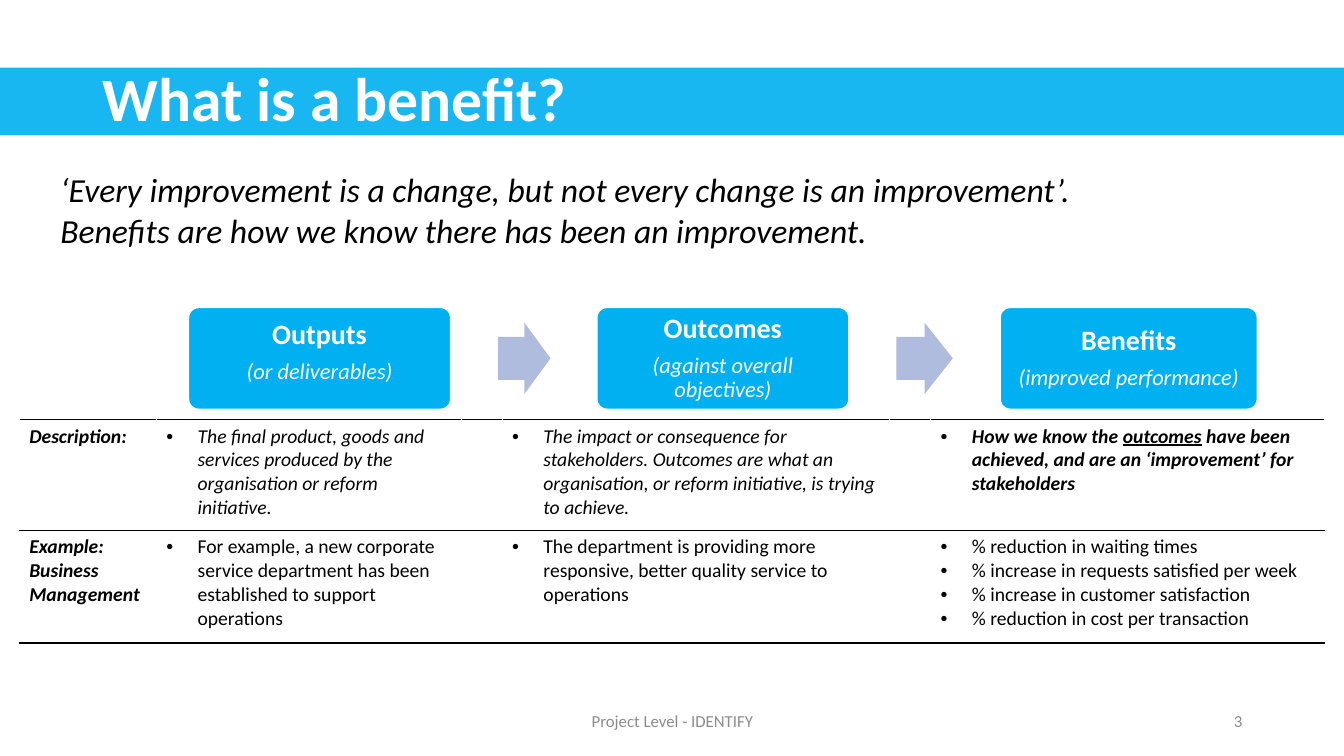
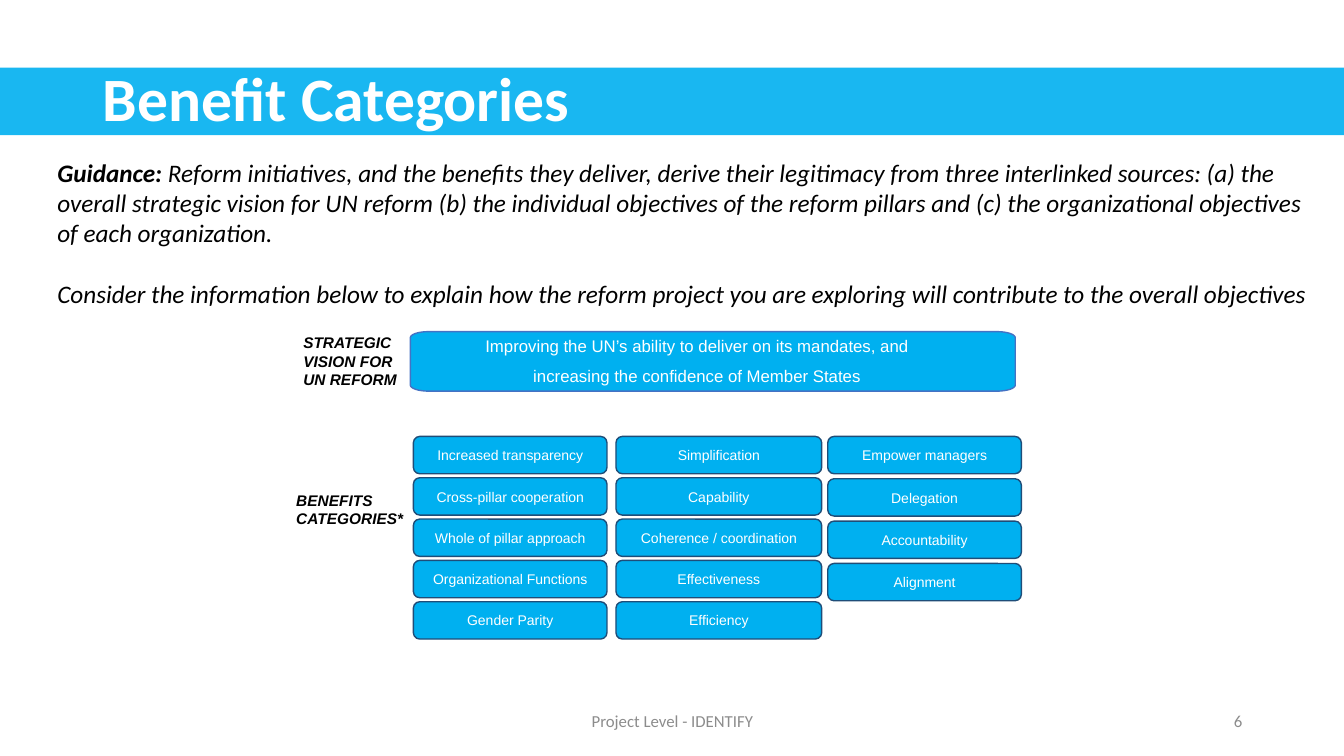
from math import cos, pi, sin

from lxml.etree import SubElement
from pptx import Presentation
from pptx.dml.color import RGBColor
from pptx.enum.shapes import MSO_SHAPE as Shape
from pptx.enum.text import MSO_ANCHOR as Anchor, PP_ALIGN as Align
from pptx.oxml import parse_xml
from pptx.oxml.ns import nsdecls, qn
from pptx.util import Inches, Pt

SKY = RGBColor(0x00, 0xB0, 0xF0)
NAVY = RGBColor(0x1F, 0x4D, 0x78)
BLUE = RGBColor(0x44, 0x72, 0xC4)
LAVENDER = RGBColor(0xB0, 0xBC, 0xDE)
GREY = RGBColor(0x8C, 0x8C, 0x8C)
BLACK = RGBColor(0, 0, 0)
WHITE = RGBColor(0xFF, 0xFF, 0xFF)

WIDTH, HEIGHT = 13.33, 7.5
FOOTER = "Project Level - IDENTIFY"

QUOTE = [
    [("‘Every improvement is a change, but not every change is an improvement’.", "i")],
    [("Benefits are how we know there has been an improvement.", "i")],
]
STAGES = [
    (1.87, 2.6, "Outputs", "(or deliverables)", 0.2),
    (5.92, 2.5, "Outcomes", "(against overall objectives)", 0.08),
    (9.92, 2.55, "Benefits", "(improved performance)", 0.08),
]
ARROWS = [(4.94, 0.52), (8.89, 0.56)]
TABLE_COLUMNS = [1.36, 3.03, 0.4, 3.84, 0.41, 3.91]
TABLE_ROWS = [
    (1.1, [
        [[("Description:", "bi")]],
        [[("The final product, goods and services produced by the organisation "
           "or reform initiative.", "i")]],
        [[("The impact or consequence for stakeholders. Outcomes are what an "
           "organisation, or reform initiative, is trying to achieve.", "i")]],
        [[("How we know the ", "bi"), ("outcomes", "biu"),
          (" have been achieved, and are an ‘improvement’ for stakeholders", "bi")]],
    ]),
    (1.12, [
        [[("Example: Business Management", "bi")]],
        [[("For example, a new corporate service department has been established "
           "to support operations", "")]],
        [[("The department is providing more responsive, better quality service "
           "to operations", "")]],
        [[("% reduction in waiting times", "")],
         [("% increase in requests satisfied per week", "")],
         [("% increase in customer satisfaction", "")],
         [("% reduction in cost per transaction", "")]],
    ]),
]
FILLED_COLUMNS = [0, 1, 3, 5]

GUIDANCE = [
    [("Guidance: ", "bi"),
     ("Reform initiatives, and the benefits they deliver, derive their legitimacy from "
      "three interlinked sources: (a) the overall strategic vision for UN reform (b) the "
      "individual objectives of the reform pillars and (c) the organizational objectives "
      "of each organization.", "i")],
    [("Consider the information below to explain how the reform project you are "
      "exploring will contribute to the overall objectives", "i")],
]
VISION = [
    [("Improving the UN’s ability to deliver on its mandates, and", "")],
    [("increasing the confidence of Member States", "")],
]
SIDE_LABELS = [
    ("STRATEGIC VISION FOR UN REFORM", (2.91, 3.24, 1.19, 0.68)),
    ("BENEFITS CATEGORIES*", (2.84, 4.81, 1.4, 0.49)),
]
CATEGORIES = [
    (4.1, 1.92, 0.41, ["Increased transparency", "Cross-pillar cooperation",
                       "Whole of pillar approach", "Organizational Functions",
                       "Gender Parity"]),
    (6.11, 2.04, 0.41, ["Simplification", "Capability", "Coherence / coordination",
                        "Effectiveness", "Efficiency"]),
    (8.21, 1.92, 0.42, ["Empower managers", "Delegation", "Accountability", "Alignment"]),
]
CATEGORY_TOP, CATEGORY_HEIGHT = 4.33, 0.37


def write(frame, paragraphs, size, color, font="Calibri", align=Align.LEFT,
          anchor=Anchor.TOP):
    frame.word_wrap = True
    frame.vertical_anchor = anchor
    for index, spans in enumerate(paragraphs):
        para = frame.add_paragraph() if index else frame.paragraphs[0]
        para.alignment = align
        for text, marks in spans:
            span = para.add_run()
            span.text = text
            span.font.name = font
            span.font.size = Pt(size)
            span.font.color.rgb = color
            span.font.bold = "b" in marks
            span.font.italic = "i" in marks
            span.font.underline = "u" in marks
    return frame


def add_text(page, area, paragraphs, size, color, **style):
    box = page.shapes.add_textbox(*map(Inches, area))
    return write(box.text_frame, paragraphs, size, color, **style)


def paint(shape, fill, line=None):
    shape.shadow.inherit = False
    shape.fill.solid()
    shape.fill.fore_color.rgb = fill
    if line is None:
        shape.line.fill.background()
    else:
        shape.line.color.rgb = line
        shape.line.width = Pt(1)


def add_block(page, kind, area, fill, line=None, adjust=()):
    shape = page.shapes.add_shape(kind, *map(Inches, area))
    for index, value in enumerate(adjust):
        shape.adjustments[index] = value
    paint(shape, fill, line)
    return shape


def add_page(deck, title, number):
    page = deck.slides.add_slide(deck.slide_layouts[6])
    band = add_block(page, Shape.RECTANGLE, (0, 0.67, WIDTH, 0.67), SKY)
    color = band.fill._xPr.find(qn("a:solidFill"))[0]
    SubElement(color, qn("a:alpha"), val="90000")
    heading = add_text(page, (0.92, 0.28, 11.5, 1.45), [[(title, "b")]], 44, WHITE,
                       anchor=Anchor.MIDDLE)
    heading.paragraphs[0].line_spacing = 0.9
    for text, left, width, align in [(FOOTER, 4.42, 4.5, Align.CENTER),
                                     (str(number), 9.42, 3, Align.RIGHT)]:
        add_text(page, (left, 6.95, width, 0.4), [[(text, "")]], 12, GREY,
                 align=align, anchor=Anchor.MIDDLE)
    return page


def add_bullet(para):
    props = para._p.get_or_add_pPr()
    props.set("marL", str(Inches(0.31)))
    props.set("indent", str(-Inches(0.31)))
    SubElement(props, qn("a:buFont"), typeface="Arial")
    SubElement(props, qn("a:buChar"), char="•")


def rule_cell(cell):
    cell.fill.background()
    props = cell._tc.get_or_add_tcPr()
    for index, side in enumerate(("lnT", "lnB")):
        props.insert(index, parse_xml(
            f'<a:{side} {nsdecls("a")} w="{Pt(1)}"><a:solidFill>'
            f'<a:srgbClr val="{BLACK}"/></a:solidFill></a:{side}>'))


def add_definitions(page):
    heights = [height for height, _ in TABLE_ROWS]
    area = (0.19, 4.16, sum(TABLE_COLUMNS), sum(heights))
    table = page.shapes.add_table(len(heights), len(TABLE_COLUMNS),
                                  *map(Inches, area)).table
    table.first_row = table.horz_banding = False
    for column, width in zip(table.columns, TABLE_COLUMNS):
        column.width = Inches(width)
    for row, (height, contents) in zip(table.rows, TABLE_ROWS):
        row.height = Inches(height)
        for cell in row.cells:
            rule_cell(cell)
        for index, paragraphs in zip(FILLED_COLUMNS, contents):
            frame = write(row.cells[index].text_frame, paragraphs, 14, BLACK)
            if index:
                for para in frame.paragraphs:
                    add_bullet(para)


def build_benefit_page(deck):
    page = add_page(deck, "What is a benefit?", 3)
    add_text(page, (0.5, 1.63, 12.64, 0.91), QUOTE, 24, BLACK)
    for left, width, name, detail, bottom in STAGES:
        stage = add_block(page, Shape.ROUNDED_RECTANGLE, (left, 3.05, width, 1.01),
                          SKY, WHITE, [0.1])
        frame = write(stage.text_frame, [[(name, "b")], [(detail, "i")]], 16, WHITE,
                      align=Align.CENTER, anchor=Anchor.MIDDLE)
        frame.margin_left = frame.margin_right = frame.margin_top = Inches(0.08)
        frame.margin_bottom = Inches(bottom)
        for para in frame.paragraphs:
            para.line_spacing = 0.9
        frame.paragraphs[0].space_after = Pt(7)
        frame.paragraphs[0].runs[0].font.size = Pt(20)
    for left, width in ARROWS:
        add_block(page, Shape.RIGHT_ARROW, (left, 3.2, width, 0.71), LAVENDER,
                  adjust=[0.6, 0.5])
    add_definitions(page)


def add_vision_banner(page):
    left, top, width, height = 4.07, 3.29, 6, 0.59
    radius_x, radius_y, steps = 0.18, 0.06, 8
    centers = [(left + width - radius_x, top + height - radius_y),
               (left + radius_x, top + height - radius_y),
               (left + radius_x, top + radius_y),
               (left + width - radius_x, top + radius_y)]
    points = []
    for corner, (x, y) in enumerate(centers):
        for step in range(steps + 1):
            angle = (corner + step / steps) * pi / 2
            points.append((Inches(x + radius_x * cos(angle)),
                           Inches(y + radius_y * sin(angle))))
    builder = page.shapes.build_freeform(*points[0])
    builder.add_line_segments(points[1:], close=True)
    paint(builder.convert_to_shape(), SKY, BLUE)
    frame = add_text(page, (3.58, 3.28, 6.67, 0.62), VISION, 12, WHITE, font="Arial",
                     align=Align.CENTER)
    for para in frame.paragraphs:
        para.space_after = Pt(7.3)


def build_category_page(deck):
    page = add_page(deck, "Benefit Categories", 6)
    frame = add_text(page, (0.47, 1.51, 12.73, 1.62), GUIDANCE, 18, BLACK)
    frame.paragraphs[1].space_before = Pt(22)
    add_vision_banner(page)
    for text, area in SIDE_LABELS:
        add_text(page, area, [[(text, "bi")]], 11, BLACK, font="Arial",
                 anchor=Anchor.MIDDLE)
    for left, width, pitch, names in CATEGORIES:
        for row, name in enumerate(names):
            area = (left, CATEGORY_TOP + row * pitch, width, CATEGORY_HEIGHT)
            box = add_block(page, Shape.ROUNDED_RECTANGLE, area, SKY, NAVY, [0.17])
            write(box.text_frame, [[(name, "")]], 10, WHITE, font="Arial",
                  align=Align.CENTER, anchor=Anchor.MIDDLE)


def main():
    deck = Presentation()
    deck.slide_width, deck.slide_height = Inches(WIDTH), Inches(HEIGHT)
    build_benefit_page(deck)
    build_category_page(deck)
    deck.save("out.pptx")


if __name__ == "__main__":
    main()
